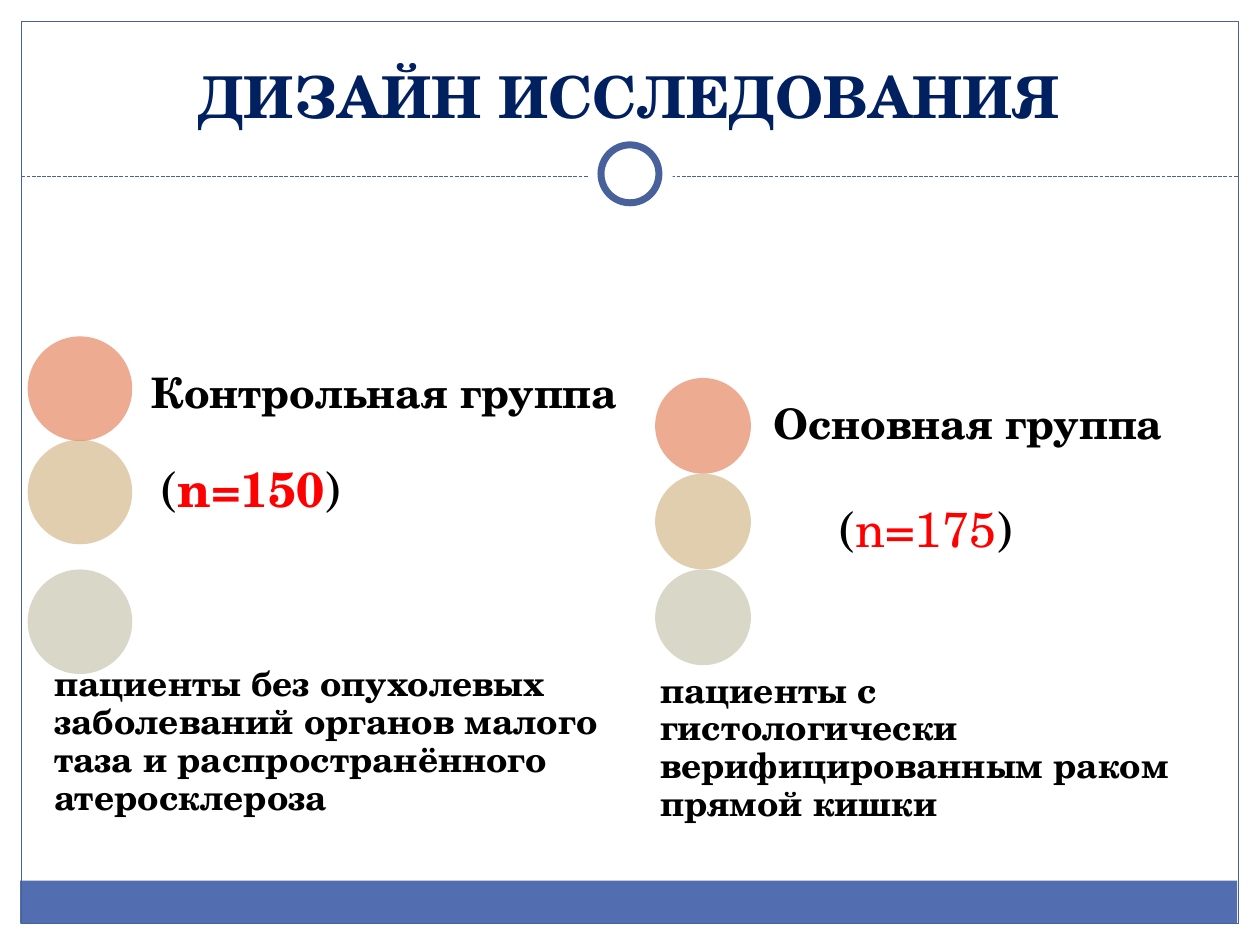
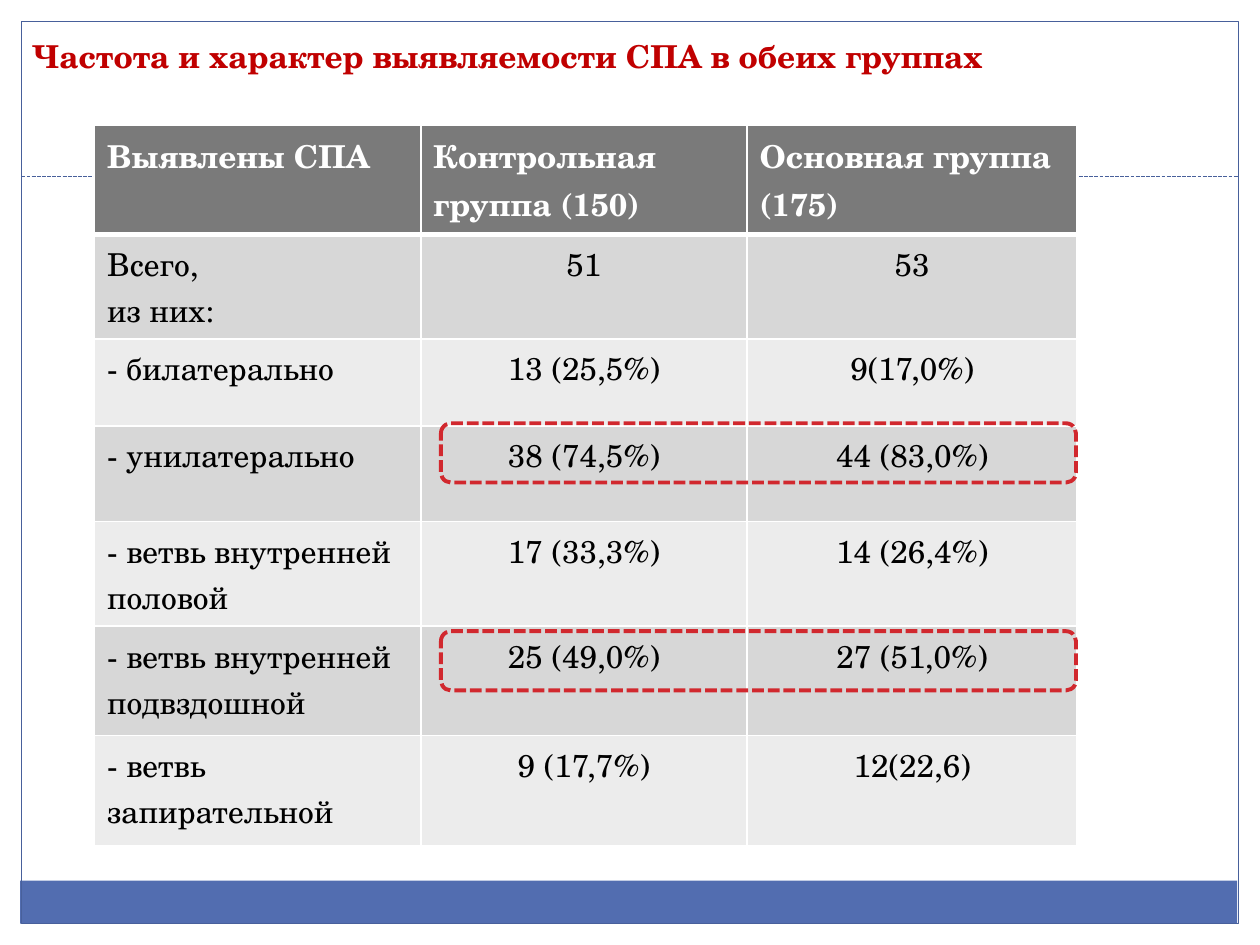
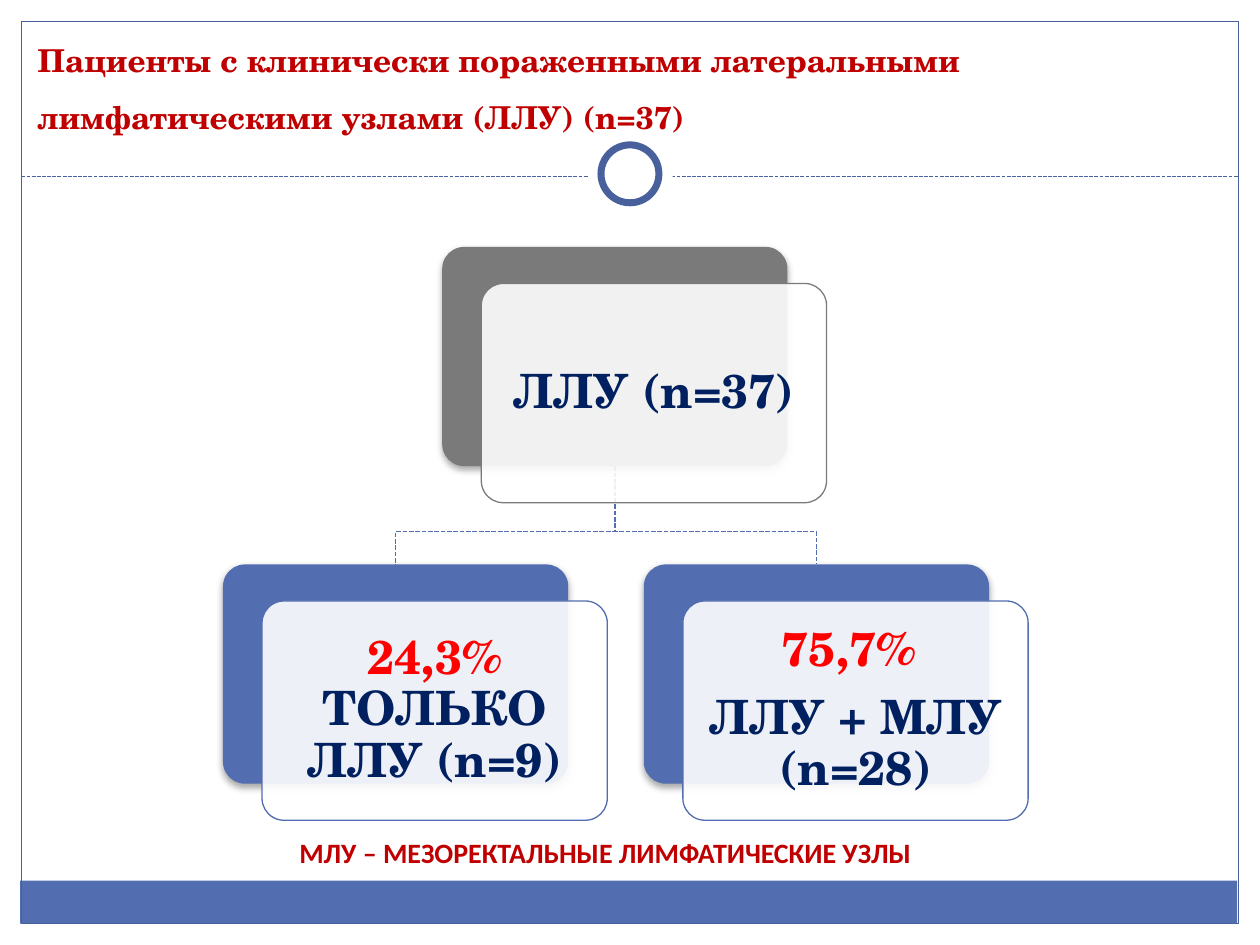
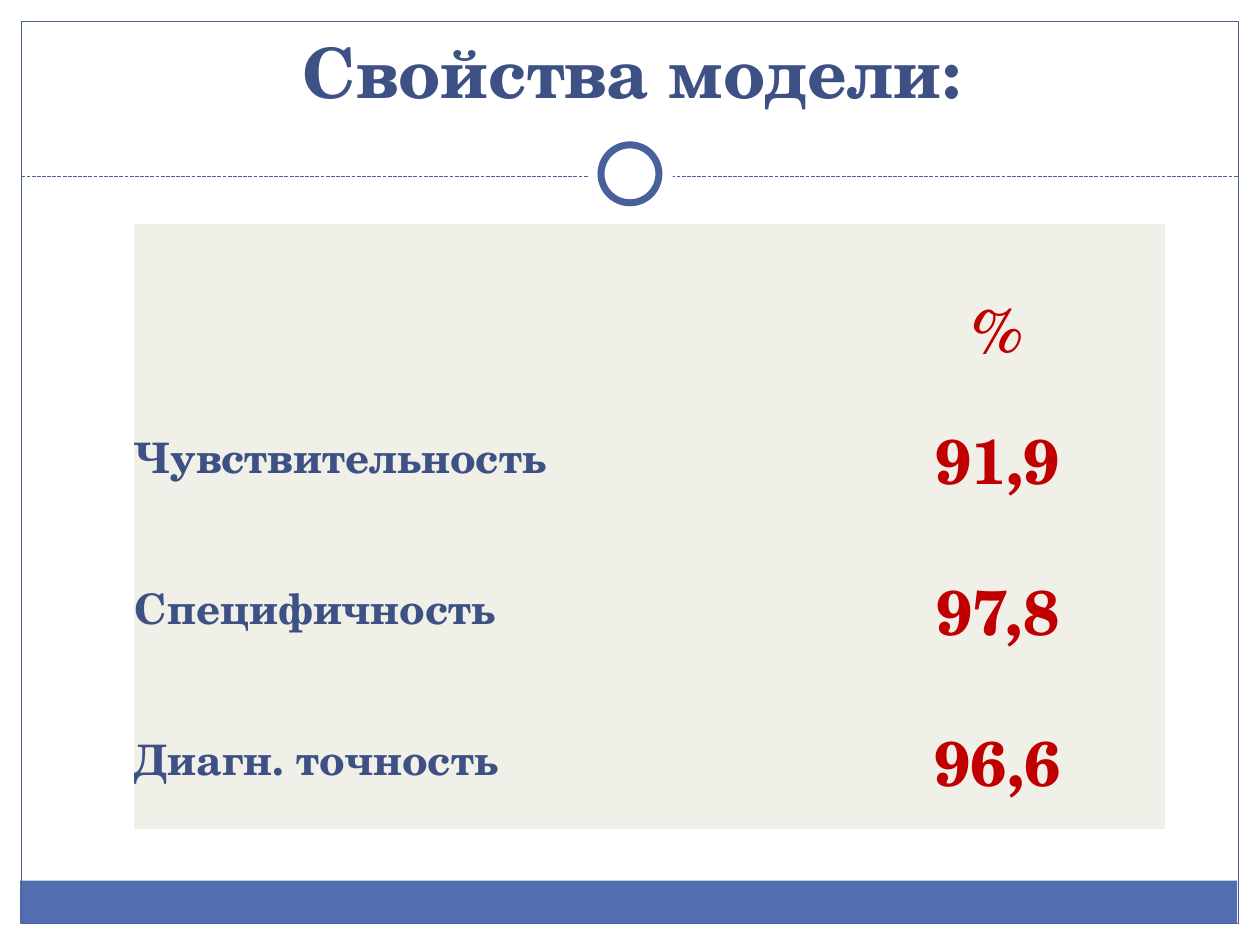
import dataclasses

import lxml.etree
import pptx
import pptx.dml.color
import pptx.enum.dml
import pptx.enum.shapes
import pptx.enum.text
import pptx.oxml.ns
import pptx.util

Inches = pptx.util.Inches
Pt = pptx.util.Pt
qn = pptx.oxml.ns.qn
Shape = pptx.enum.shapes.MSO_SHAPE
Align = pptx.enum.text.PP_ALIGN
Anchor = pptx.enum.text.MSO_ANCHOR
SYSTEM_DASH = pptx.enum.dml.MSO_LINE.SQUARE_DOT


@dataclasses.dataclass(frozen=True)
class Theme:
    """Colours, fonts and type sizes shared by all slides."""
    font: str = "TeX Gyre Schola"
    note_font: str = "Calibri"
    white: str = "FFFFFF"
    black: str = "000000"
    band: str = "526DB0"
    frame: str = "48609B"
    navy: str = "002060"
    blue: str = "3D5185"
    crimson: str = "C00000"
    red: str = "FF0000"
    marker: str = "D1282E"
    gray: str = "7A7A7A"
    stripes: tuple = ("D7D7D7", "ECECEC")
    panel: str = "F0F0E9"
    circles: tuple = ("DC5924", "C39E60", "B4B392")
    title: float = 33
    large_title: float = 39.6
    heading: float = 18
    body: float = 18
    note: float = 16
    description: float = 20
    group: float = 24
    count: float = 28
    card: float = 27
    figure: float = 36


THEME = Theme()


def rgb(color):
    """Turn a hex string into a colour value."""
    return pptx.dml.color.RGBColor.from_string(color)


def apply(target, values):
    """Set each attribute named in values on target."""
    for name, value in values.items():
        setattr(target, name, value)


def run(text, size, color=THEME.black, bold=False, font=THEME.font):
    """Describe one piece of formatted text."""
    return text, {"size": Pt(size), "bold": bold, "name": font}, color


def write_text(frame, paragraphs, **layout):
    """Write paragraphs, each a list of runs, into a text frame."""
    for index, runs in enumerate(paragraphs):
        paragraph = frame.add_paragraph() if index else frame.paragraphs[0]
        apply(paragraph, {"alignment": Align.LEFT, **layout})
        for text, values, color in runs:
            piece = paragraph.add_run()
            piece.text = text
            apply(piece.font, values)
            piece.font.color.rgb = rgb(color)


def margins(left, top, right, bottom):
    """Give the inner margins as format values."""
    names = ("margin_left", "margin_top", "margin_right", "margin_bottom")
    return {name: Inches(value) for name, value in zip(names, (left, top, right, bottom))}


def add_text(slide, box, paragraphs, anchor=Anchor.TOP, inset=(0.1, 0.05, 0.1, 0.05), **layout):
    """Add a wrapping text box."""
    frame = slide.shapes.add_textbox(*map(Inches, box)).text_frame
    apply(frame, {"word_wrap": True, "vertical_anchor": anchor, **margins(*inset)})
    write_text(frame, paragraphs, **layout)


def set_line(line, color, width, dash=None):
    """Format an outline."""
    line.color.rgb = rgb(color)
    apply(line, {"width": Pt(width), "dash_style": dash})


def add_shape(slide, kind, box, fill=None, opacity=100, line=None):
    """Add a preset shape without shadow."""
    shape = slide.shapes.add_shape(kind, *map(Inches, box))
    shape.shadow.inherit = False
    if fill:
        shape.fill.solid()
        shape.fill.fore_color.rgb = rgb(fill)
    else:
        shape.fill.background()
    if opacity < 100:
        color = shape.element.spPr.find(qn("a:solidFill"))[0]
        lxml.etree.SubElement(color, qn("a:alpha"), val=str(opacity * 1000))
    if line:
        set_line(shape.line, *line)
    else:
        shape.line.fill.background()
    return shape


def add_drop_shadow(shape):
    """Give a shape a soft shadow below it."""
    effects = shape.element.spPr.find(qn("a:effectLst"))
    shadow = lxml.etree.SubElement(
        effects, qn("a:outerShdw"), blurRad=str(Pt(4)), dist=str(Pt(2)), dir="5400000", rotWithShape="0")
    color = lxml.etree.SubElement(shadow, qn("a:srgbClr"), val=THEME.black)
    lxml.etree.SubElement(color, qn("a:alpha"), val="35000")


def add_slide(presentation):
    """Add a blank slide with the shared frame, band, divider and ring."""
    slide = presentation.slides.add_slide(presentation.slide_layouts[6])
    for box in ((0, 0, 10, 1.52), (0, 0, 0.17, 7.5), (9.83, 0, 0.17, 7.5)):
        add_shape(slide, Shape.RECTANGLE, box, THEME.white)
    add_shape(slide, Shape.RECTANGLE, (0.16, 6.99, 9.66, 0.34), THEME.band)
    add_shape(slide, Shape.RECTANGLE, (0.17, 0.17, 9.66, 7.16), line=(THEME.frame, 0.75))
    divider = slide.shapes.add_connector(
        pptx.enum.shapes.MSO_CONNECTOR.STRAIGHT, *map(Inches, (0.17, 1.4, 9.83, 1.4)))
    set_line(divider.line, THEME.frame, 0.75, SYSTEM_DASH)
    lxml.etree.SubElement(divider.element.spPr, qn("a:effectLst"))
    add_shape(slide, Shape.OVAL, (4.67, 1.05, 0.67, 0.67), THEME.white)
    add_shape(slide, Shape.OVAL, (4.77, 1.15, 0.46, 0.46), THEME.white, line=(THEME.frame, 4))
    return slide


def add_title(slide, box, text, size, color, alignment=Align.CENTER):
    """Add a bold title standing on the bottom of its box."""
    add_text(slide, box, [[run(text, size, color, True)]], Anchor.BOTTOM, alignment=alignment)


def add_circles(slide, left, tops, diameter):
    """Add a column of translucent circles."""
    for top, color in zip(tops, THEME.circles):
        add_shape(slide, Shape.OVAL, (left, top, diameter, diameter), color, 50)


def add_group_text(slide, box, runs, indent=0):
    """Add one indented text of a study group."""
    add_text(slide, box, [runs], Anchor.MIDDLE, (indent, 0.03, 0, 0.03), line_spacing=0.9)


def add_table(slide, left, top, widths, heights):
    """Add a table with plain banding and return it."""
    box = (left, top, sum(widths), sum(heights))
    table = slide.shapes.add_table(len(heights), len(widths), *map(Inches, box)).table
    apply(table, {"first_row": False, "horz_banding": False})
    for column, width in zip(table.columns, widths):
        column.width = Inches(width)
    for row, height in zip(table.rows, heights):
        row.height = Inches(height)
    return table


def format_cell(cell, fill, borders, **values):
    """Set fill, border widths (left, right, top, bottom) and layout of a cell."""
    properties = cell._tc.get_or_add_tcPr()
    for side, width in zip("LRTB", borders):
        line = lxml.etree.SubElement(properties, qn("a:ln" + side), w=str(Pt(width)))
        if width:
            solid = lxml.etree.SubElement(line, qn("a:solidFill"))
            lxml.etree.SubElement(solid, qn("a:srgbClr"), val=THEME.white)
        else:
            lxml.etree.SubElement(line, qn("a:noFill"))
    cell.fill.solid()
    cell.fill.fore_color.rgb = rgb(fill)
    apply(cell, values)


def add_card(slide, left, top, color, paragraphs):
    """Add a coloured plate with a translucent text card in front."""
    width, height = 2.74, 1.74
    plate = add_shape(slide, Shape.ROUNDED_RECTANGLE, (left, top, width, height), color)
    add_drop_shadow(plate)
    card = add_shape(slide, Shape.ROUNDED_RECTANGLE, (left + 0.31, top + 0.29, width, height),
                     THEME.white, 90, (color, 0.75))
    for shape in (plate, card):
        shape.adjustments[0] = 0.1
    apply(card.text_frame, {"word_wrap": True, "vertical_anchor": Anchor.MIDDLE,
                            **margins(0.06, 0.06, 0.06, 0.06)})
    write_text(card.text_frame, paragraphs, alignment=Align.CENTER, line_spacing=0.9,
               space_after=Pt(0.35 * THEME.card))


def add_branch(slide, start, end, turn):
    """Add a dashed elbow line that turns at the given height."""
    points = [start, (start[0], turn), (end[0], turn), end]
    points = [tuple(map(Inches, point)) for point in points]
    builder = slide.shapes.build_freeform(*points[0])
    builder.add_line_segments(points[1:], close=False)
    branch = builder.convert_to_shape()
    branch.shadow.inherit = False
    branch.fill.background()
    set_line(branch.line, THEME.band, 0.9, SYSTEM_DASH)


def build_design(presentation):
    """Build the slide with the two study groups."""
    slide = add_slide(presentation)
    add_title(slide, (0.33, 0.25, 9.33, 0.83), "ДИЗАЙН ИССЛЕДОВАНИЯ", THEME.title, THEME.navy)
    add_circles(slide, 0.22, (2.67, 3.49, 4.52), 0.83)
    add_circles(slide, 5.2, (3, 3.76, 4.52), 0.76)
    groups = (
        ("Контрольная группа", (0.63, 2.72, 4.41, 0.83), 0.57,
         "n=150", True, (0.63, 3.49, 4.41, 0.83), 0.65,
         "пациенты без опухолевых заболеваний органов малого таза и распространённого атеросклероза",
         (0.43, 5.28, 4.41, 1.22)),
        ("Основная группа", (5.58, 3, 4.06, 0.76), 0.56,
         "n=175", False, (5.58, 3.84, 4.06, 0.76), 1.08,
         "пациенты с гистологически верифицированным раком прямой кишки",
         (5.24, 5.56, 4.06, 0.76)),
    )
    for name, name_box, name_indent, count, bold, count_box, count_indent, description, box in groups:
        add_group_text(slide, name_box, [run(name, THEME.group, bold=True)], name_indent)
        add_group_text(slide, count_box, [
            run("(", THEME.count), run(count, THEME.count, THEME.red, bold), run(")", THEME.count),
        ], count_indent)
        add_group_text(slide, box, [run(description, THEME.description, bold=True)])


def build_frequency(presentation):
    """Build the slide with the detection table."""
    slide = add_slide(presentation)
    add_title(slide, (0.16, -0.19, 9.33, 0.83), "Частота и характер выявляемости СПА в обеих группах",
              THEME.heading, THEME.crimson, Align.LEFT)
    rows = (
        (("Выявлены СПА",), "Контрольная группа (150)", "Основная группа (175)"),
        (("Всего,", "из них:"), "51", "53"),
        (("- билатерально",), "13 (25,5%)", "9(17,0%)"),
        (("- унилатерально",), "38 (74,5%)", "44 (83,0%)"),
        (("- ветвь внутренней половой",), "17 (33,3%)", "14 (26,4%)"),
        (("- ветвь внутренней подвздошной",), "25 (49,0%)", "27 (51,0%)"),
        (("- ветвь запирательной",), "9 (17,7%)", "12(22,6)"),
    )
    table = add_table(slide, 0.75, 0.99, (2.59, 2.59, 2.62), (0.87, 0.83, 0.69, 0.76, 0.83, 0.87, 0.87))
    for row, (label, *values) in enumerate(rows):
        header = row == 0
        fill = THEME.gray if header else THEME.stripes[(row - 1) % 2]
        color = THEME.white if header else THEME.black
        borders = (1, 1, 3 if row == 1 else 1, 3 if header else 1)
        for column, lines in enumerate((label, *((value,) for value in values))):
            cell = table.cell(row, column)
            format_cell(cell, fill, borders)
            write_text(cell.text_frame, [[run(line, THEME.body, color, header)] for line in lines],
                       alignment=Align.CENTER if column and not header else Align.LEFT)
    for top in (3.36, 5.01):
        add_shape(slide, Shape.ROUNDED_RECTANGLE, (3.5, top, 5.04, 0.47),
                  line=(THEME.marker, 2.25, SYSTEM_DASH))


def build_nodes(presentation):
    """Build the slide with the lymph node tree."""
    slide = add_slide(presentation)
    for end in (6.48, 3.14):
        add_branch(slide, (4.88, 3.7), (end, 4.48), 4.22)
    percent = [run(text, THEME.card, THEME.red, True) for text in ("24,3% ", "75,7% ")]
    names = [run(text, THEME.card, THEME.navy, True)
             for text in ("ЛЛУ (n=37)", "ТОЛЬКО ЛЛУ (n=9)", "ЛЛУ + МЛУ (n=28)")]
    add_card(slide, 3.51, 1.96, THEME.gray, [[names[0]]])
    add_card(slide, 1.77, 4.48, THEME.band, [[percent[0], names[1]]])
    add_card(slide, 5.11, 4.48, THEME.band, [[percent[1]], [names[2]]])
    heading = "Пациенты с клинически пораженными латеральными лимфатическими узлами (ЛЛУ) (n=37)"
    add_text(slide, (0.2, 0.13, 9.45, 0.96), [[run(heading, THEME.heading, THEME.crimson, True)]],
             line_spacing=1.5)
    note = "МЛУ – МЕЗОРЕКТАЛЬНЫЕ ЛИМФАТИЧЕСКИЕ УЗЛЫ"
    add_text(slide, (1.46, 6.58, 6.69, 0.37),
             [[run(note, THEME.note, THEME.crimson, True, THEME.note_font)]], alignment=Align.CENTER)


def build_properties(presentation):
    """Build the slide with the model properties."""
    slide = add_slide(presentation)
    add_title(slide, (0.35, 0.26, 9.33, 0.68), "Свойства модели:", THEME.large_title, THEME.blue)
    rows = (("", "%"), ("Чувствительность", "91,9"), ("Специфичность", "97,8"), ("Диагн. точность", "96,6"))
    table = add_table(slide, 1.06, 1.78, (5.53, 2.66), [1.2] * len(rows))
    styles = ((THEME.group, THEME.blue, Align.LEFT), (THEME.figure, THEME.crimson, Align.CENTER))
    for row, texts in enumerate(rows):
        for column, (text, (size, color, alignment)) in enumerate(zip(texts, styles)):
            cell = table.cell(row, column)
            format_cell(cell, THEME.panel, (0, 0, 0, 0), **margins(0.01, 0.01, 0.01, 0),
                        vertical_anchor=Anchor.MIDDLE if row else Anchor.BOTTOM)
            if text:
                write_text(cell.text_frame, [[run(text, size, color, row > 0)]],
                           alignment=alignment, line_spacing=1.15)


def main():
    """Build and save the presentation."""
    presentation = pptx.Presentation()
    apply(presentation, {"slide_width": Inches(10), "slide_height": Inches(7.5)})
    for build in (build_design, build_frequency, build_nodes, build_properties):
        build(presentation)
    presentation.save("out.pptx")


if __name__ == "__main__":
    main()
